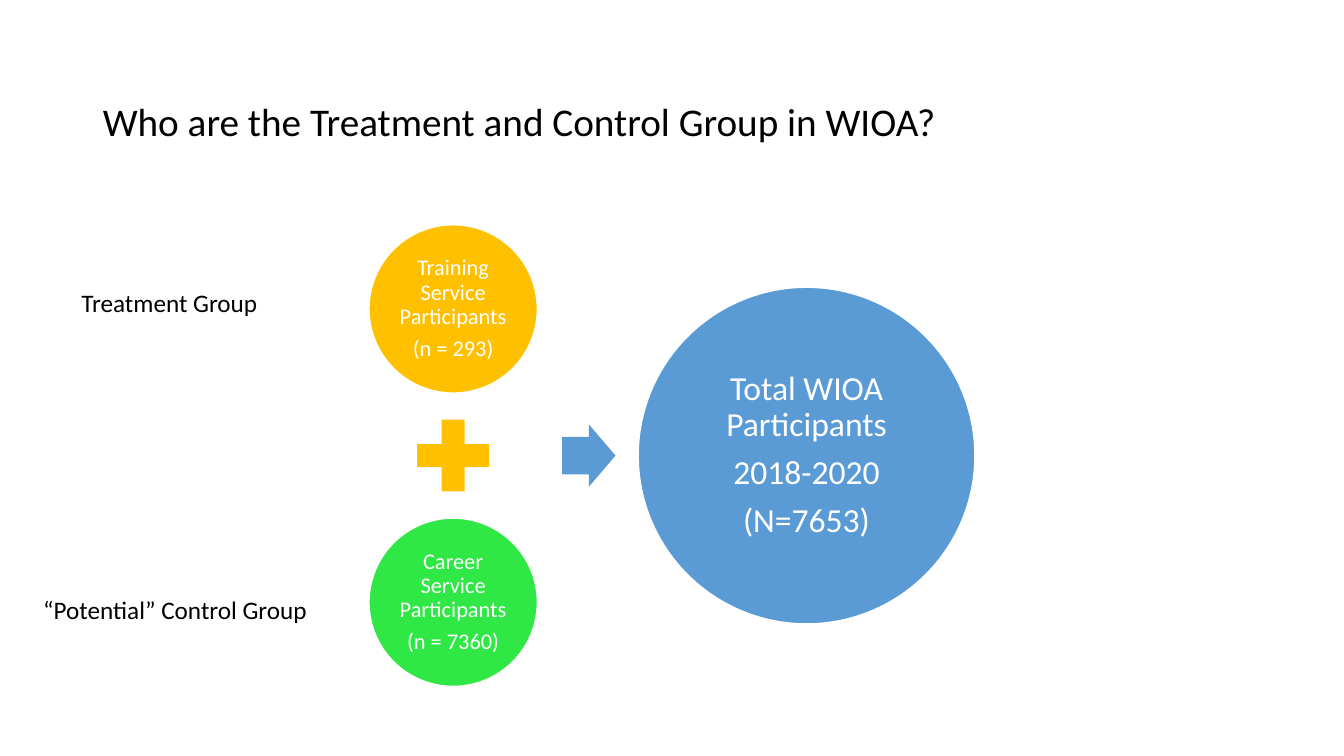
from pptx import Presentation
from pptx.dml.color import RGBColor
from pptx.enum import shapes, text
from pptx.util import Inches, Pt

FONT = "Calibri"
BLACK, WHITE = "000000", "FFFFFF"
GOLD, GREEN, BLUE = "FFC000", "30E845", "5B9BD5"


def color(hex_code):
    return RGBColor.from_string(hex_code)


def write(frame, lines, size, ink, align, spacing=1.0, after=0):
    frame.text = "\n".join(lines)
    for para in frame.paragraphs:
        para.alignment = align
        para.line_spacing = spacing
        para.space_after = Pt(after)
        para.font.name = FONT
        para.font.size = Pt(size)
        para.font.color.rgb = color(ink)


def add_title(page, left, top, width, height, words):
    title = page.shapes.title
    title.left, title.top = Inches(left), Inches(top)
    title.width, title.height = Inches(width), Inches(height)
    frame = title.text_frame
    frame.vertical_anchor = text.MSO_ANCHOR.MIDDLE
    write(frame, [words], 28, BLACK, text.PP_ALIGN.LEFT, spacing=0.9)


def add_label(page, left, top, width, words, wrap=True):
    box = page.shapes.add_textbox(
        Inches(left), Inches(top), Inches(width), Inches(0.4))
    box.text_frame.word_wrap = wrap
    write(box.text_frame, [words], 18, BLACK, text.PP_ALIGN.LEFT)


def add_figure(page, kind, center_x, center_y, width, height, fill):
    """Place a borderless filled shape around a centre point."""
    figure = page.shapes.add_shape(
        kind, Inches(center_x - width / 2), Inches(center_y - height / 2),
        Inches(width), Inches(height))
    figure.shadow.inherit = False
    figure.fill.solid()
    figure.fill.fore_color.rgb = color(fill)
    figure.line.fill.background()
    return figure


def add_circle(page, center_x, center_y, diameter, fill, lines, size):
    circle = add_figure(page, shapes.MSO_SHAPE.OVAL, center_x, center_y,
                        diameter, diameter, fill)
    circle.line.color.rgb = color(WHITE)
    circle.line.width = Pt(1)
    frame = circle.text_frame
    frame.word_wrap = True
    frame.vertical_anchor = text.MSO_ANCHOR.MIDDLE
    frame.margin_left = frame.margin_right = Inches(0.02)
    frame.margin_top = frame.margin_bottom = Inches(0.02)
    write(frame, lines, size, WHITE, text.PP_ALIGN.CENTER,
          spacing=0.9, after=0.35 * size)


def add_equation(page, left, top, width, height):
    """Two stacked circles joined by a plus, leading to a total circle."""
    small, total = 1.67, 3.34
    parts_x = left + small / 2
    middle_y = top + height / 2
    add_circle(page, parts_x, top + small / 2, small, GOLD,
               ["Training Service Participants", "(n = 293)"], 16)
    add_figure(page, shapes.MSO_SHAPE.MATH_PLUS, parts_x, middle_y,
               0.97, 0.97, GOLD)
    add_circle(page, parts_x, top + height - small / 2, small, GREEN,
               ["Career Service Participants", "(n = 7360)"], 16)
    arrow_x = left + (small + width - total) / 2 + 0.01
    arrow = add_figure(page, shapes.MSO_SHAPE.RIGHT_ARROW, arrow_x, middle_y,
                       0.53, 0.62, BLUE)
    arrow.adjustments[0] = 0.6
    arrow.adjustments[1] = 0.5
    add_circle(page, left + width - total / 2, middle_y, total, BLUE,
               ["Total WIOA Participants", "2018-2020", "(N=7653)"], 24)


def main():
    deck = Presentation()
    deck.slide_width, deck.slide_height = Inches(13.33), Inches(7.5)
    page = deck.slides.add_slide(deck.slide_layouts.get_by_name("Title Only"))
    add_title(page, 0.92, 0.61, 11.5, 1.24,
              "Who are the Treatment and Control Group in WIOA?")
    add_equation(page, 3.66, 2.23, 6.01, 4.58)
    add_label(page, 0.71, 2.8, 2.03, "Treatment Group")
    add_label(page, 0.33, 5.85, 2.84, "“Potential” Control Group", wrap=False)
    deck.save("out.pptx")


if __name__ == "__main__":
    main()
